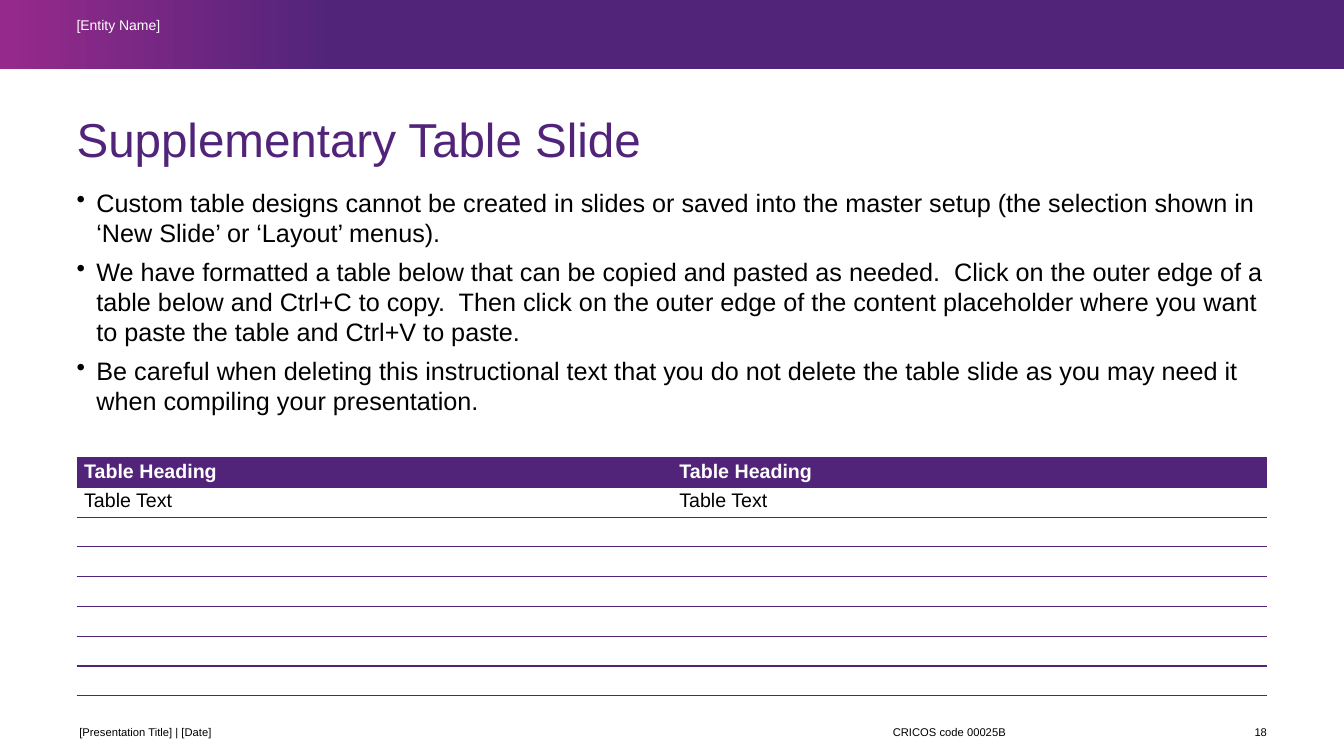
from dataclasses import dataclass

from lxml import etree
from pptx import Presentation
from pptx.dml.color import RGBColor
from pptx.enum.shapes import MSO_SHAPE
from pptx.enum.text import MSO_ANCHOR as Anchor, PP_ALIGN as Align
from pptx.oxml.ns import qn
from pptx.util import Cm, Pt

PURPLE = RGBColor(0x51, 0x24, 0x7A)
MAGENTA = RGBColor(0x96, 0x2A, 0x8B)
BLACK = RGBColor(0, 0, 0)
WHITE = RGBColor(0xFF, 0xFF, 0xFF)
FONT = "Arial"
LEFT, WIDTH = 1.93, 30.0  # content column in cm
FOOTER_TOP, FOOTER_HEIGHT = 18.11, 0.66
ROWS, COLS, ROW_HEIGHT = 8, 2, 0.75

BULLETS = [
    "Custom table designs cannot be created in slides or saved into the master setup "
    "(the selection shown in ‘New Slide’ or ‘Layout’ menus).",
    "We have formatted a table below that can be copied and pasted as needed.  "
    "Click on the outer edge of a table below and Ctrl+C to copy.  Then click on the "
    "outer edge of the content placeholder where you want to paste the table and "
    "Ctrl+V to paste.",
    "Be careful when deleting this instructional text that you do not delete the "
    "table slide as you may need it when compiling your presentation.",
]
TABLE_TEXT = ["Table Heading", "Table Text"]  # by row, the same in each column


@dataclass
class Label:
    text: str
    left: float
    top: float
    width: float
    height: float = FOOTER_HEIGHT
    size: int = 8
    color: RGBColor = BLACK
    align: Align = Align.LEFT
    anchor: Anchor = Anchor.MIDDLE
    spacing: float = 1.0


LABELS = [
    Label("[Entity Name]", LEFT, 0.51, 6.6, size=10, color=WHITE,
          anchor=Anchor.TOP, spacing=0.8),
    Label("[Presentation Title] | [Date]", 2.0, FOOTER_TOP, 9.32),
    Label("CRICOS code 00025B", 22.5, FOOTER_TOP, 6.65),
    Label("18", 31.13, FOOTER_TOP, 0.8, align=Align.RIGHT),
]


def apply(target, values: dict) -> None:
    for name, value in values.items():
        setattr(target, name, value)


def set_frame(tf, anchor: Anchor) -> None:
    apply(tf, dict(word_wrap=True, vertical_anchor=anchor, margin_left=0,
                   margin_top=0, margin_right=0, margin_bottom=0))


def write(p, text: str, size: int, color: RGBColor, bold: bool = False) -> None:
    r = p.add_run()
    r.text = text
    apply(r.font, dict(name=FONT, size=Pt(size), bold=bold))
    r.font.color.rgb = color


def add_band(s) -> None:
    band = s.shapes.add_shape(MSO_SHAPE.RECTANGLE, 0, 0, Cm(33.87), Cm(1.75))
    band.shadow.inherit = False
    band.line.fill.background()
    band.fill.gradient()
    band.fill.gradient_angle = 0
    stops = zip(band.fill.gradient_stops, [(0, MAGENTA), (0.25, PURPLE)])
    for stop, (position, color) in stops:
        stop.position = position
        stop.color.rgb = color


def add_label(s, label: Label) -> None:
    box = s.shapes.add_textbox(Cm(label.left), Cm(label.top),
                               Cm(label.width), Cm(label.height))
    set_frame(box.text_frame, label.anchor)
    p = box.text_frame.paragraphs[0]
    apply(p, dict(alignment=label.align, line_spacing=label.spacing))
    write(p, label.text, label.size, label.color)


def add_title(s, text: str) -> None:
    title = s.shapes.title
    apply(title, dict(left=Cm(LEFT), top=Cm(2.92), width=Cm(WIDTH), height=Cm(1.3)))
    set_frame(title.text_frame, Anchor.MIDDLE)
    p = title.text_frame.paragraphs[0]
    apply(p, dict(alignment=Align.LEFT, line_spacing=0.9))
    write(p, text, 34, PURPLE)


def add_bullets(s, texts: list[str]) -> None:
    tf = s.shapes.add_textbox(Cm(LEFT), Cm(4.72), Cm(WIDTH), Cm(6)).text_frame
    set_frame(tf, Anchor.TOP)
    for i, text in enumerate(texts):
        p = tf.add_paragraph() if i else tf.paragraphs[0]
        pPr = p._p.get_or_add_pPr()
        pPr.set("marL", str(Cm(0.5)))
        pPr.set("indent", str(-Cm(0.5)))
        etree.SubElement(pPr, qn("a:buChar")).set("char", "•")
        apply(p, dict(line_spacing=1.0, space_before=Pt(3 if i else 0),
                      space_after=Pt(3)))
        write(p, text, 18, BLACK)


def set_borders(cell) -> None:
    tcPr = cell._tc.get_or_add_tcPr()
    for i, (side, shown) in enumerate([("L", False), ("R", False),
                                       ("T", True), ("B", True)]):
        ln = etree.Element(qn(f"a:ln{side}"), w=str(Pt(1)))
        if shown:
            fill = etree.SubElement(ln, qn("a:solidFill"))
            etree.SubElement(fill, qn("a:srgbClr")).set("val", str(PURPLE))
        else:
            etree.SubElement(ln, qn("a:noFill"))
        tcPr.insert(i, ln)


def add_grid(s) -> None:
    frame = s.shapes.add_table(ROWS, COLS, Cm(LEFT), Cm(11.53),
                               Cm(WIDTH), Cm(ROWS * ROW_HEIGHT))
    table = frame.table
    for row in table.rows:
        row.height = Cm(ROW_HEIGHT)
    for i in range(ROWS):
        header = i == 0
        for j in range(COLS):
            cell = table.cell(i, j)
            apply(cell, dict(margin_left=Cm(0.19), margin_right=Cm(0.19),
                             margin_top=Cm(0.07), margin_bottom=Cm(0.07)))
            cell.fill.solid()
            cell.fill.fore_color.rgb = PURPLE if header else WHITE
            set_borders(cell)
            p = cell.text_frame.paragraphs[0]
            if i < len(TABLE_TEXT):
                write(p, TABLE_TEXT[i], 14, WHITE if header else BLACK, header)
            else:  # keeps an empty row at its height
                etree.SubElement(p._p, qn("a:endParaRPr")).set("sz", "1400")


def main() -> None:
    prs = Presentation()
    apply(prs, dict(slide_width=Cm(33.87), slide_height=Cm(19.05)))
    s = prs.slides.add_slide(prs.slide_layouts[5])

    # Header band and title
    add_band(s)
    add_title(s, "Supplementary Table Slide")

    # Instructions and table
    add_bullets(s, BULLETS)
    add_grid(s)

    # Entity name and footer
    for label in LABELS:
        add_label(s, label)

    prs.save("out.pptx")


if __name__ == "__main__":
    main()
